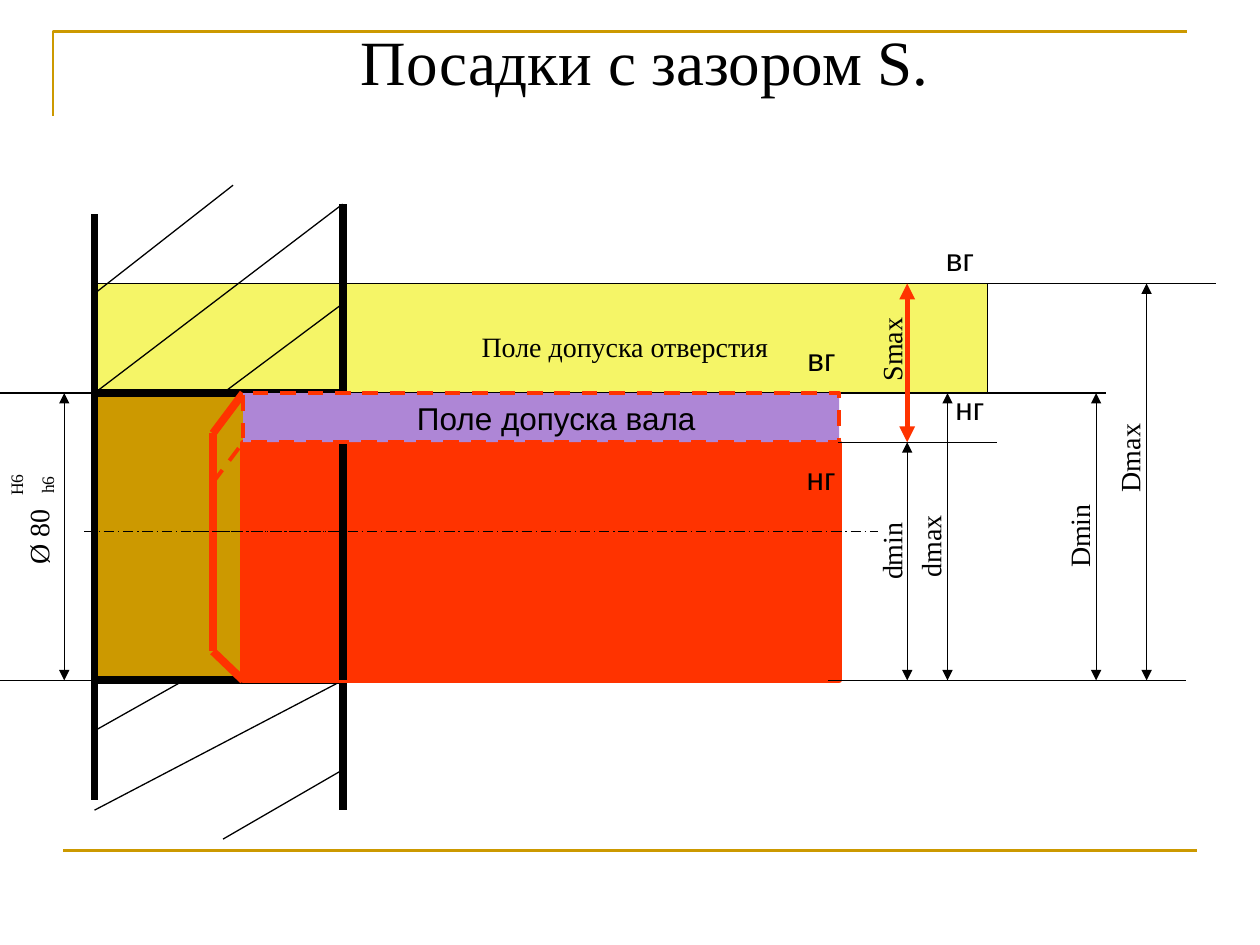
from dataclasses import dataclass

import lxml.etree
import pptx
import pptx.dml.color
import pptx.enum.dml
import pptx.enum.shapes
import pptx.enum.text
import pptx.oxml.ns
import pptx.util

Inches = pptx.util.Inches
Pt = pptx.util.Pt
Dash = pptx.enum.dml.MSO_LINE
Align = pptx.enum.text.PP_ALIGN
qn = pptx.oxml.ns.qn

BLACK, RED, GOLD = "000000", "FF3300", "CC9900"
SERIF, SANS = "Times New Roman", "Arial"
LEFT, RIGHT = 0.75, 2.72
TOP, ZERO, LOW, BASE = 2.25, 3.12, 3.51, 5.4
NOSE, FACE, END, AXIS = 1.69, 1.93, 6.66, 4.22


@dataclass
class Line:
    x1: float
    y1: float
    x2: float
    y2: float
    width: float = 0.75
    color: str = BLACK
    dash: Dash | None = None
    arrows: bool = False


@dataclass
class Box:
    x: float
    y: float
    w: float
    h: float
    fill: str
    width: float
    color: str = BLACK
    dash: Dash | None = None


@dataclass
class Label:
    text: str
    x: float
    y: float
    w: float
    h: float = 0.37
    size: float = 16
    font: str = SERIF
    align: Align = Align.CENTER
    turn: float = 0


def rgb(code: str) -> pptx.dml.color.RGBColor:
    return pptx.dml.color.RGBColor.from_string(code)


def stroke(line, item: Line | Box) -> None:
    line.color.rgb = rgb(item.color)
    line.width = Pt(item.width)
    if item.dash:
        line.dash_style = item.dash


def draw_line(shapes, item: Line) -> None:
    ends = [Inches(v) for v in (item.x1, item.y1, item.x2, item.y2)]
    shape = shapes.add_connector(pptx.enum.shapes.MSO_CONNECTOR.STRAIGHT, *ends)
    stroke(shape.line, item)
    props = shape.element.spPr
    if item.arrows:
        for end in ("a:headEnd", "a:tailEnd"):
            lxml.etree.SubElement(props.find(qn("a:ln")), qn(end), type="triangle")
    lxml.etree.SubElement(props, qn("a:effectLst"))


def draw_box(shapes, item: Box) -> None:
    frame = [Inches(v) for v in (item.x, item.y, item.w, item.h)]
    shape = shapes.add_shape(pptx.enum.shapes.MSO_SHAPE.RECTANGLE, *frame)
    shape.shadow.inherit = False
    shape.fill.solid()
    shape.fill.fore_color.rgb = rgb(item.fill)
    stroke(shape.line, item)


def draw_label(shapes, item: Label) -> None:
    frame = [Inches(v) for v in (item.x, item.y, item.w, item.h)]
    shape = shapes.add_textbox(*frame)
    shape.rotation = item.turn
    body = shape.text_frame
    body.word_wrap = True
    body.auto_size = pptx.enum.text.MSO_AUTO_SIZE.SHAPE_TO_FIT_TEXT
    body.text = item.text
    for index, para in enumerate(body.paragraphs):
        para.alignment = item.align
        para.space_before = Pt(item.size * 0.57 if index else 0)
        para.font.size = Pt(item.size)
        para.font.name = item.font
        para.font.color.rgb = rgb(BLACK)


def draw_frame(shapes) -> None:
    x, y = Inches(0.42), Inches(0.25)
    maker = shapes.build_freeform(x, Inches(0.92))
    maker.add_line_segments([(x, y), (Inches(9.42), y)], close=False)
    shape = maker.convert_to_shape()
    shape.shadow.inherit = False
    shape.fill.background()
    shape.line.color.rgb = rgb(GOLD)
    shape.line.width = Pt(1.5)
    draw_line(shapes, Line(0.5, 6.75, 9.5, 6.75, 1.5, GOLD))


def axis(x1: float, x2: float) -> Line:
    return Line(x1, AXIS, x2, AXIS, dash=Dash.LONG_DASH_DOT)


def level(x1: float, x2: float, y: float) -> Line:
    return Line(x1, y, x2, y)


def size(x: float, y1: float, y2: float = BASE) -> Line:
    return Line(x, y1, x, y2, arrows=True)


def wall(x: float, y1: float, y2: float) -> Line:
    return Line(x, y1, x, y2, 4.5)


def upright(text: str, x: float, y: float, w: float) -> Label:
    return Label(text, x, y, w, turn=270)


def plain(text: str, x: float, y: float, w: float) -> Label:
    return Label(text, x, y, w, 0.4, 18, SANS, Align.RIGHT)


ITEMS = [
    Box(LEFT, TOP, 7.09, ZERO - TOP, "F5F567", 0.75),
    Label("Посадки с зазором S.", 0.67, 0.13, 8.9, 0.7, 36),
    Box(LEFT, ZERO, RIGHT - LEFT, BASE - ZERO, GOLD, 4.5),
    axis(0.67, 2.95),
    wall(LEFT, BASE, 6.35),
    wall(RIGHT, BASE, 6.43),
    wall(LEFT, ZERO, 1.7),
    wall(RIGHT, ZERO, 1.62),
    Line(LEFT, ZERO, RIGHT, 1.62),
    Line(1.77, ZERO, RIGHT, 2.41),
    Line(LEFT, 2.33, 1.85, 1.47),
    Line(RIGHT, BASE, LEFT, 6.43),
    Line(1.46, BASE, LEFT, 5.8),
    Line(RIGHT, 6.11, 1.77, 6.66),
    Box(FACE, LOW, END - FACE, BASE - LOW, RED, 3, RED),
    Line(NOSE, 3.44, NOSE, 5.17, 4.5, RED),
    Line(NOSE, 5.17, FACE, BASE, 4.5, RED),
    Line(NOSE, 3.44, FACE, ZERO, 4.5, RED),
    Line(NOSE, 3.83, FACE, LOW, 2.25, RED, Dash.DASH),
    axis(1.53, 6.97),
    wall(RIGHT, ZERO, BASE),
    axis(1.85, 2.8),
    level(6.57, 9.41, BASE),
    level(6.65, 8.78, ZERO),
    level(7.76, 9.65, TOP),
    size(7.2, LOW),
    Line(7.2, TOP, 7.2, LOW, 3, RED, arrows=True),
    size(7.52, ZERO),
    size(8.7, ZERO),
    size(9.1, TOP),
    level(LEFT, 0, BASE),
    level(LEFT, 0, ZERO),
    size(0.51, ZERO),
    upright("Ø 80", -0.13, 4.08, 0.87),
    Label("H6\nh6", -0.1, 3.59, 0.71, 0.52, 10, turn=270),
    Label("Поле допуска отверстия", 3.11, 2.57, 3.7),
    upright("Smax", 6.55, 2.59, 1.05),
    upright("dmin", 6.6, 4.19, 0.95),
    upright("dmax", 6.88, 4.15, 1.01),
    upright("Dmin", 8.14, 4.07, 0.85),
    upright("Dmax", 8.53, 3.45, 0.87),
    Box(FACE, ZERO, END - FACE, LOW - ZERO, "AE86D6", 2.25, RED, Dash.DASH),
    plain("Поле допуска вала", 1.53, 3.12, 4.09),
    plain("вг", 7.2, 1.86, 0.63),
    plain("нг", 7.36, 3.04, 0.55),
    plain("вг", 6.26, 2.65, 0.47),
    plain("нг", 6.02, 3.59, 0.71),
    level(6.65, 7.91, LOW),
]


def main() -> None:
    deck = pptx.Presentation()
    deck.slide_width, deck.slide_height = Inches(10), Inches(7.5)
    shapes = deck.slides.add_slide(deck.slide_layouts[6]).shapes
    draw_frame(shapes)
    draw = {Line: draw_line, Box: draw_box, Label: draw_label}
    for item in ITEMS:
        draw[type(item)](shapes, item)
    deck.save("out.pptx")


if __name__ == "__main__":
    main()
